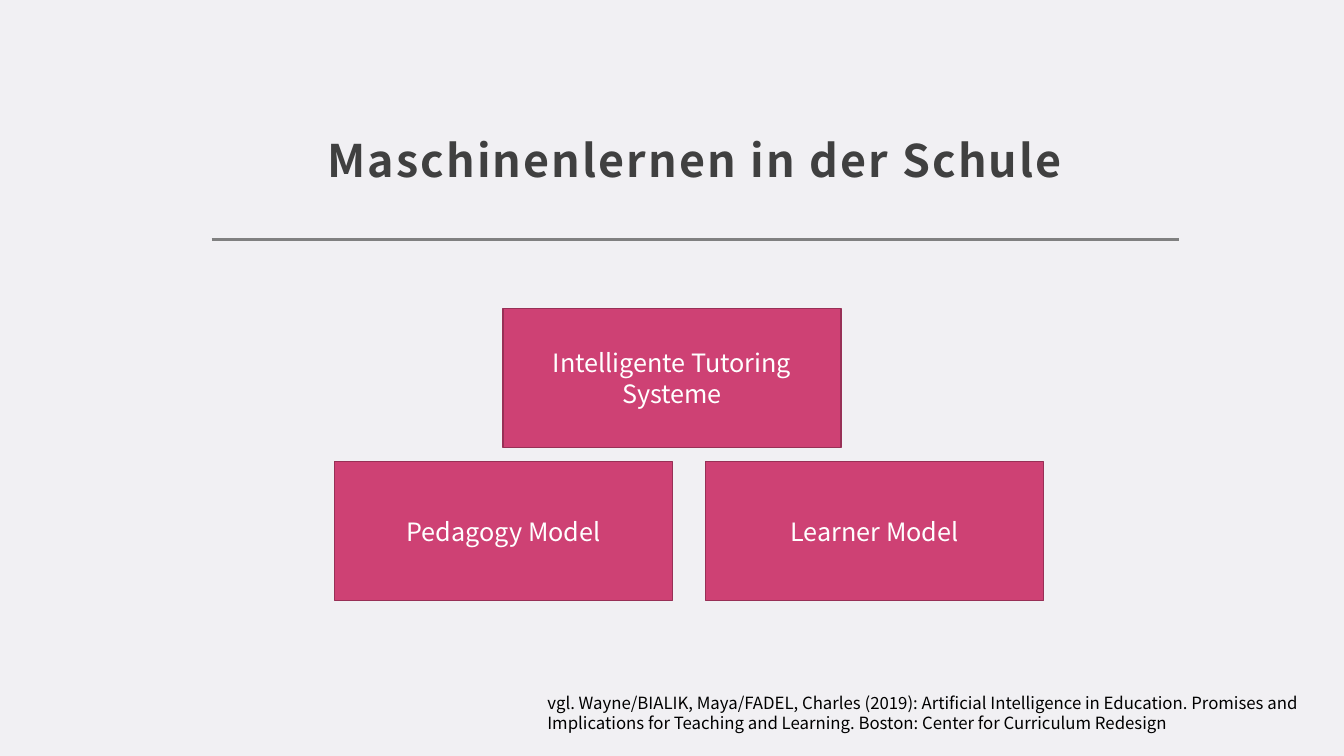
from dataclasses import dataclass

from lxml import etree
from pptx import Presentation
from pptx.dml.color import RGBColor
from pptx.enum import shapes, text
from pptx.oxml import ns
from pptx.shapes.autoshape import Shape
from pptx.slide import Slide
from pptx.util import Inches, Pt

FONT = "Noto Sans CJK JP"
BACKGROUND = RGBColor(0xF1, 0xF0, 0xF3)
RULE_GRAY = RGBColor(0x80, 0x80, 0x80)
TITLE_GRAY = RGBColor(0x40, 0x40, 0x40)
PINK = RGBColor(0xCE, 0x41, 0x74)
DARK_PINK = RGBColor(0x98, 0x30, 0x56)
WHITE = RGBColor(0xFF, 0xFF, 0xFF)
BLACK = RGBColor(0x00, 0x00, 0x00)

MODEL_WIDTH, MODEL_HEIGHT = 3.35, 1.38
CONTENT_LEFT, CONTENT_RIGHT, RULE_TOP = 2.1, 11.69, 2.38


@dataclass(frozen=True)
class Model:
    label: str
    left: float
    top: float


MODELS = (
    Model("Intelligente Tutoring Systeme", 4.99, 3.06),
    Model("Pedagogy Model", 3.32, 4.58),
    Model("Learner Model", 7.0, 4.58),
)


def write(
    box: Shape,
    content: str,
    *,
    size: float,
    color: RGBColor,
    align: text.PP_ALIGN = text.PP_ALIGN.LEFT,
    anchor: text.MSO_ANCHOR = text.MSO_ANCHOR.TOP,
    bold: bool = False,
    line_spacing: float | None = None,
    tracking: float = 0,
) -> None:
    frame = box.text_frame
    frame.word_wrap = True
    frame.vertical_anchor = anchor
    paragraph = frame.paragraphs[0]
    paragraph.alignment = align
    paragraph.line_spacing = line_spacing
    run = paragraph.add_run()
    run.text = content
    run.font.name = FONT
    run.font.size = Pt(size)
    run.font.bold = bold
    run.font.color.rgb = color
    if tracking:
        run._r.get_or_add_rPr().set("spc", str(round(tracking * 100)))


def add_rule(slide: Slide) -> None:
    rule = slide.shapes.add_connector(
        shapes.MSO_CONNECTOR.STRAIGHT,
        Inches(CONTENT_LEFT), Inches(RULE_TOP), Inches(CONTENT_RIGHT), Inches(RULE_TOP),
    )
    rule.line.color.rgb = RULE_GRAY
    rule.line.width = Pt(2)
    etree.SubElement(rule._element.spPr, ns.qn("a:effectLst"))


def add_title(slide: Slide) -> None:
    title = slide.shapes.add_textbox(
        Inches(CONTENT_LEFT), Inches(0.48), Inches(CONTENT_RIGHT - CONTENT_LEFT), Inches(1.47)
    )
    frame = title.text_frame
    frame.margin_left = frame.margin_right = frame.margin_top = Inches(0.12)
    frame.margin_bottom = Inches(0.1)
    write(
        title, "Maschinenlernen in der Schule", size=32, color=TITLE_GRAY, bold=True,
        align=text.PP_ALIGN.CENTER, anchor=text.MSO_ANCHOR.BOTTOM,
        line_spacing=1.3, tracking=1.5,
    )


def add_model(slide: Slide, model: Model) -> None:
    box = slide.shapes.add_shape(
        shapes.MSO_SHAPE.RECTANGLE,
        Inches(model.left), Inches(model.top), Inches(MODEL_WIDTH), Inches(MODEL_HEIGHT),
    )
    box.shadow.inherit = False
    box.fill.solid()
    box.fill.fore_color.rgb = PINK
    box.line.color.rgb = DARK_PINK
    box.line.width = Pt(1)
    write(
        box, model.label, size=18, color=WHITE,
        align=text.PP_ALIGN.CENTER, anchor=text.MSO_ANCHOR.MIDDLE,
    )


def add_citation(slide: Slide) -> None:
    citation = slide.shapes.add_textbox(Inches(5.33), Inches(6.82), Inches(7.89), Inches(0.5))
    citation.text_frame.auto_size = text.MSO_AUTO_SIZE.SHAPE_TO_FIT_TEXT
    write(
        citation,
        "vgl. Wayne/BIALIK, Maya/FADEL, Charles (2019): Artificial Intelligence in Education. "
        "Promises and Implications for Teaching and Learning. "
        "Boston: Center for Curriculum Redesign",
        size=12, color=BLACK,
    )


def main() -> None:
    deck = Presentation()
    deck.slide_width, deck.slide_height = Inches(13.33), Inches(7.5)
    slide = deck.slides.add_slide(deck.slide_layouts[6])
    slide.background.fill.solid()
    slide.background.fill.fore_color.rgb = BACKGROUND
    add_rule(slide)
    add_title(slide)
    for model in MODELS:
        add_model(slide, model)
    add_citation(slide)
    deck.save("out.pptx")


if __name__ == "__main__":
    main()
